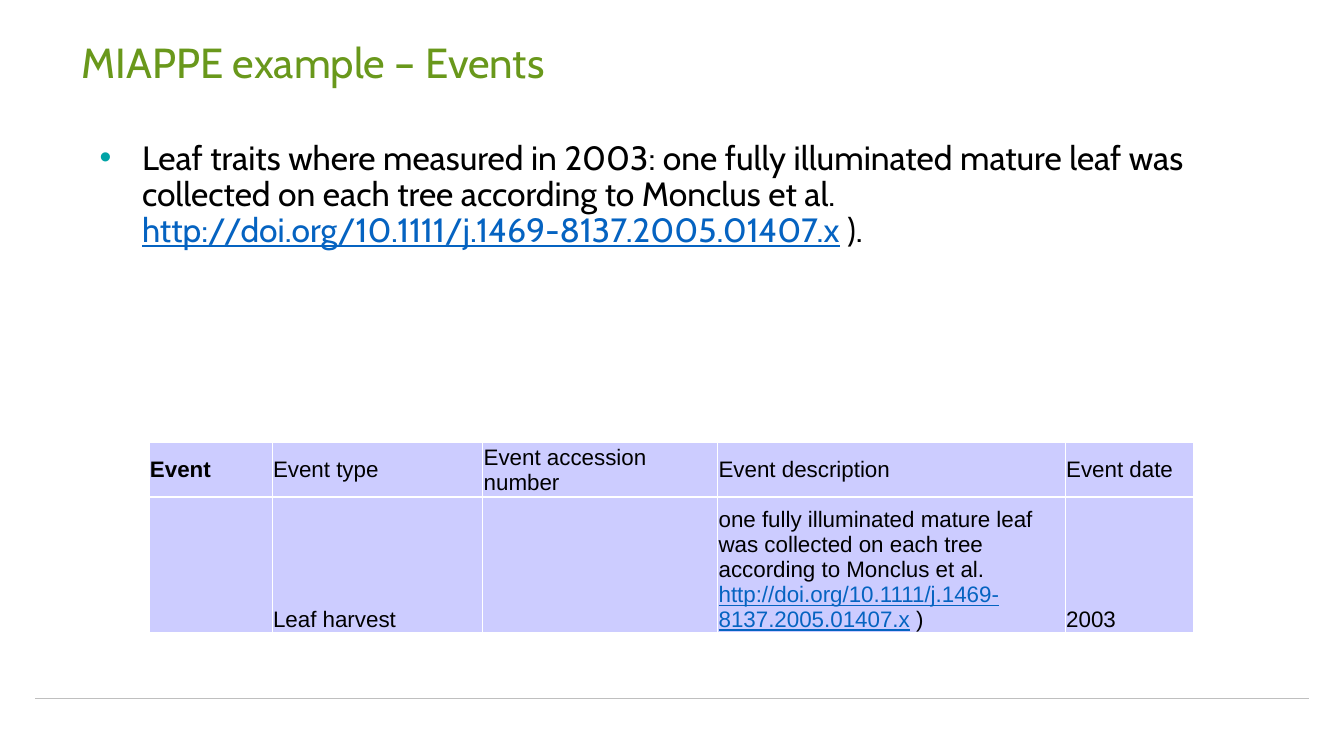
from lxml.etree import SubElement
from pptx import Presentation
from pptx.dml.color import RGBColor
from pptx.enum.shapes import MSO_CONNECTOR
from pptx.enum.text import MSO_ANCHOR, PP_ALIGN
from pptx.oxml.ns import qn
from pptx.util import Cm, Pt

CITATION = "one fully illuminated mature leaf was collected on each tree according to Monclus et al. "
LINK = "http://doi.org/10.1111/j.1469-8137.2005.01407.x"
LINK_COLOUR = "0563C1"


def colour(hex_string):
    return RGBColor.from_string(hex_string)


def write(paragraph, texts, font_name, size, text_colour="000000"):
    """Add one run per text; the citation address is underlined in link blue."""
    for text in texts:
        run = paragraph.add_run()
        run.text = text
        run.font.name = font_name
        run.font.size = Pt(size)
        run.font.underline = text == LINK
        run.font.color.rgb = colour(LINK_COLOUR if text == LINK else text_colour)


presentation = Presentation()
presentation.slide_width = Cm(33.87)
presentation.slide_height = Cm(19.05)
slide = presentation.slides.add_slide(presentation.slide_layouts[5])

# Footer rule
rule = slide.shapes.add_connector(MSO_CONNECTOR.STRAIGHT, Cm(0.89), Cm(17.6), Cm(33), Cm(17.6))
rule.line.color.rgb = colour("BFBFBF")
rule.line.width = Pt(0.75)
SubElement(rule._element.spPr, qn("a:effectLst"))

# Title
title = slide.shapes.title
title.left, title.top, title.width, title.height = Cm(2.06), Cm(0.41), Cm(29.87), Cm(2.46)
title.text_frame.margin_left = 0
title.text_frame.vertical_anchor = MSO_ANCHOR.MIDDLE
paragraph = title.text_frame.paragraphs[0]
paragraph.alignment = PP_ALIGN.LEFT
paragraph.line_spacing = 0.9
write(paragraph, ["MIAPPE example – Events"], "Cabin", 30, "69981B")

# Bullet text
body = slide.shapes.add_textbox(Cm(2.06), Cm(3.43), Cm(29.87), Cm(12.93))
body.text_frame.word_wrap = True
paragraph = body.text_frame.paragraphs[0]
paragraph.line_spacing = 0.9
properties = paragraph._p.get_or_add_pPr()
properties.set("marL", str(Cm(1.27)))
properties.set("indent", str(Cm(-1.07)))
bullet_colour = SubElement(properties, qn("a:buClr"))
SubElement(bullet_colour, qn("a:srgbClr"), val="00A3A6")
SubElement(properties, qn("a:buFont"), typeface="Arial")
SubElement(properties, qn("a:buChar"), char="•")
write(paragraph, ["Leaf traits where measured in 2003: " + CITATION, LINK, " )."], "Cabin", 24)

# Event table
event_rows = [
    [["Event"], ["Event type"], ["Event accession number"], ["Event description"], ["Event date"]],
    [[], ["Leaf harvest"], [], [CITATION, LINK, " )"], ["2003"]],
]
column_widths = [3.1, 5.31, 5.92, 8.76, 3.23]
row_heights = [1.25, 3.18]
table = slide.shapes.add_table(
    2, 5, Cm(3.76), Cm(11.15), Cm(sum(column_widths)), Cm(sum(row_heights))
).table
for column, width in zip(table.columns, column_widths):
    column.width = Cm(width)

for row_index, (texts_by_column, height) in enumerate(zip(event_rows, row_heights)):
    table.rows[row_index].height = Cm(height)
    for column_index, texts in enumerate(texts_by_column):
        cell = table.cell(row_index, column_index)
        cell.margin_left = cell.margin_right = cell.margin_top = Cm(0.02)
        cell.margin_bottom = 0
        cell.vertical_anchor = MSO_ANCHOR.BOTTOM if row_index else MSO_ANCHOR.MIDDLE
        cell_properties = cell._tc.get_or_add_tcPr()
        for side in ("lnL", "lnR", "lnT", "lnB"):
            border = SubElement(cell_properties, qn(f"a:{side}"), w=str(Pt(1)))
            border_fill = SubElement(border, qn("a:solidFill"))
            SubElement(border_fill, qn("a:srgbClr"), val="FFFFFF")
        cell.fill.solid()
        cell.fill.fore_color.rgb = colour("CCCCFF")
        paragraph = cell.text_frame.paragraphs[0]
        write(paragraph, texts, "Arial", 16)
        for run in paragraph.runs:
            run.font.bold = texts == ["Event"]

presentation.save("out.pptx")
